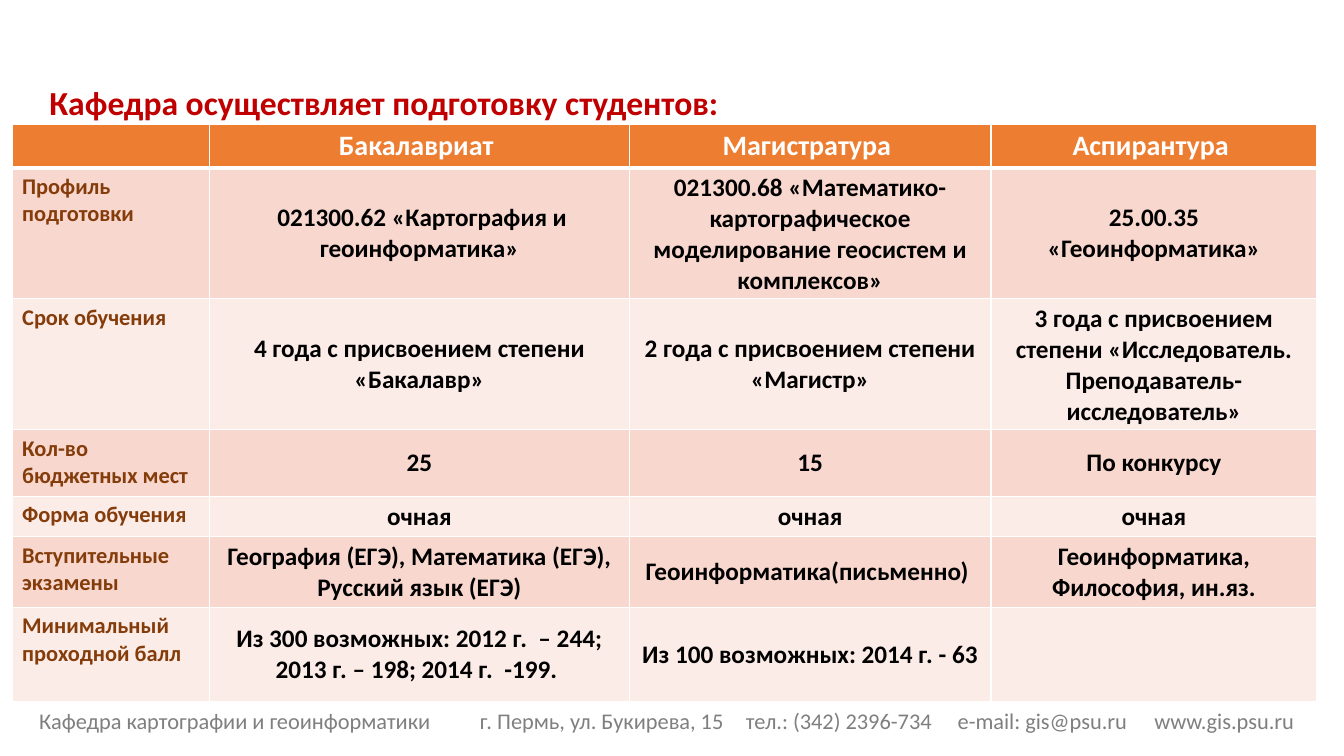
"""Builds a slide with a table of the degree programmes of a university department."""
from lxml.etree import SubElement
from pptx import Presentation
from pptx.dml.color import RGBColor as Color
from pptx.enum.text import MSO_ANCHOR as Anchor, PP_ALIGN as Align
from pptx.oxml.ns import qn
from pptx.util import Emu, Pt

SCALE = 9144
FONT = "Calibri"
COLORS = {
    "title": "C00000",
    "header": "ED7D31",
    "band_dark": "F8D7CE",
    "band_light": "FCECE8",
    "label": "843C0B",
    "body": "000000",
    "white": "FFFFFF",
    "footer": "7F7F7F",
}
COLUMN_WIDTHS = [196, 416, 359, 323]
ROW_HEIGHTS = [42, 127, 127, 66, 39, 69, 94]
ROWS = [
    ["", "Бакалавриат ", "Магистратура ", "Аспирантура "],
    ["Профиль подготовки",
     " 021300.62 «Картография и геоинформатика»",
     "021300.68 «Математико-картографическое моделирование геосистем и комплексов»",
     "25.00.35 «Геоинформатика»"],
    ["Срок обучения",
     "4 года с присвоением степени «Бакалавр»",
     "2 года с присвоением степени «Магистр»",
     "3 года с присвоением степени «Исследователь. Преподаватель-исследователь»"],
    ["Кол-во бюджетных мест", "25", "15", "По конкурсу"],
    ["Форма обучения", "очная", "очная", "очная"],
    ["Вступительные экзамены",
     "География (ЕГЭ), Математика (ЕГЭ), Русский язык (ЕГЭ)",
     "Геоинформатика(письменно) ",
     "Геоинформатика, Философия, ин.яз."],
    ["Минимальный проходной балл",
     "Из 300 возможных: 2012 г.  – 244; 2013 г. – 198; 2014 г.  -199. ",
     "Из 100 возможных: 2014 г. - 63",
     ""],
]
FOOTER = [
    (29, 420, "Кафедра картографии и геоинформатики", []),
    (466, 288, "г. Пермь, ул. Букирева, 15", []),
    (730, 570, "тел.: (342) 2396-734\te-mail: gis@psu.ru\twww.gis.psu.ru", [210, 405]),
]


def px(length):
    return Emu(length * SCALE)


def write_text(frame, text, size=18, color="body", bold=False, align=Align.LEFT,
               anchor=Anchor.TOP, tabs=()):
    frame.word_wrap = True
    frame.vertical_anchor = anchor
    paragraph = frame.paragraphs[0]
    paragraph.alignment = align
    if tabs:
        tab_list = SubElement(paragraph._p.get_or_add_pPr(), qn("a:tabLst"))
        for position in tabs:
            SubElement(tab_list, qn("a:tab"), pos=str(px(position)), algn="l")
    run = paragraph.add_run()
    run.text = text
    run.font.name = FONT
    run.font.size = Pt(size)
    run.font.bold = bold
    run.font.color.rgb = Color.from_string(COLORS[color])


class SlideBuilder:
    def __init__(self, width, height):
        self.presentation = Presentation()
        self.presentation.slide_width = px(width)
        self.presentation.slide_height = px(height)
        self.slide = self.presentation.slides.add_slide(self.presentation.slide_layouts[5])

    def title(self, text, left, top, width, height):
        shape = self.slide.shapes.title
        shape.left, shape.top = px(left), px(top)
        shape.width, shape.height = px(width), px(height)
        write_text(shape.text_frame, text, size=24, color="title", bold=True,
                   anchor=Anchor.MIDDLE)

    def text_box(self, text, left, top, width, height, **text_format):
        shape = self.slide.shapes.add_textbox(px(left), px(top), px(width), px(height))
        write_text(shape.text_frame, text, **text_format)

    def cell(self, cell, text, fill, borders, anchor=Anchor.TOP, **text_format):
        properties = cell._tc.get_or_add_tcPr()
        for side, points in zip("LRTB", borders):
            line = SubElement(properties, qn(f"a:ln{side}"), w=str(Pt(points)))
            solid = SubElement(line, qn("a:solidFill"))
            SubElement(solid, qn("a:srgbClr"), val=COLORS["white"])
        cell.fill.solid()
        cell.fill.fore_color.rgb = Color.from_string(COLORS[fill])
        cell.vertical_anchor = anchor
        if text:
            write_cell = cell.text_frame
            write_text(write_cell, text, bold=True, anchor=None, **text_format)

    def table(self, rows, left, top, column_widths, row_heights):
        table = self.slide.shapes.add_table(
            len(rows), len(column_widths), px(left), px(top),
            px(sum(column_widths)), px(sum(row_heights))).table
        table.horz_banding = False
        for column, width in zip(table.columns, column_widths):
            column.width = px(width)
        for row, height in zip(table.rows, row_heights):
            row.height = px(height)
        for i, texts in enumerate(rows):
            for j, text in enumerate(texts):
                if i == 0:
                    style = dict(fill="header", borders=(1, 1, 1, 3), size=20,
                                 color="white", align=Align.CENTER)
                else:
                    style = dict(fill="band_dark" if i % 2 else "band_light",
                                 borders=(1, 1, 3 if i == 1 else 1, 1))
                    if j == 0:
                        style.update(size=16, color="label")
                    else:
                        style.update(align=Align.CENTER, anchor=Anchor.MIDDLE)
                self.cell(table.cell(i, j), text, **style)


def main():
    builder = SlideBuilder(1333, 750)
    for left, width, text, tabs in FOOTER:
        builder.text_box(text, left, 697, width, 37, size=16, color="footer", tabs=tabs)
    builder.title("Кафедра осуществляет подготовку студентов:", 39, 63, 1262, 76)
    builder.table(ROWS, 12, 123, COLUMN_WIDTHS, ROW_HEIGHTS)
    builder.presentation.save("out.pptx")


if __name__ == "__main__":
    main()
